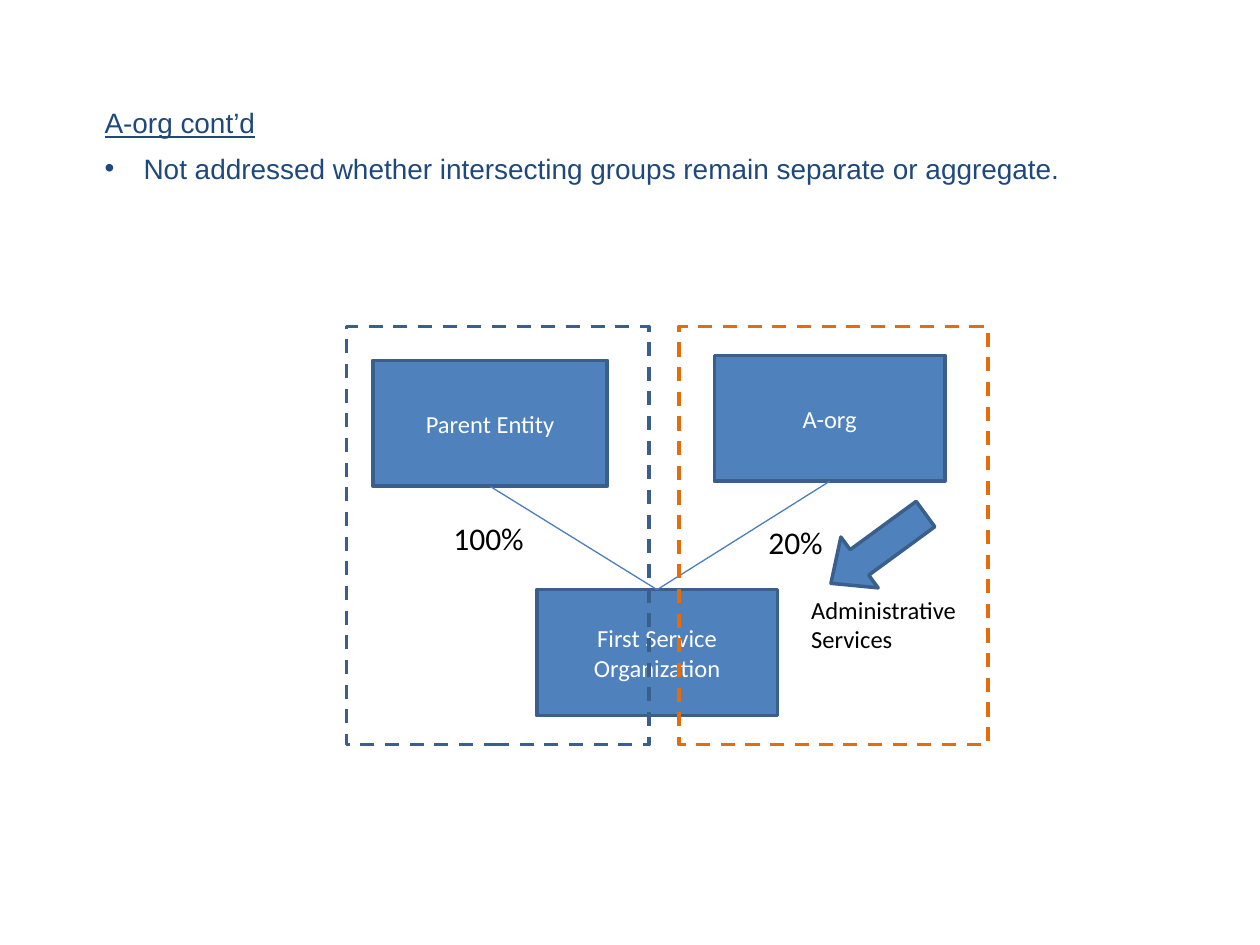
from dataclasses import dataclass

from lxml import etree
from pptx import Presentation
from pptx.dml.color import RGBColor
from pptx.enum.dml import MSO_LINE
from pptx.enum.shapes import MSO_CONNECTOR, MSO_SHAPE
from pptx.enum.text import MSO_ANCHOR, MSO_AUTO_SIZE, PP_ALIGN
from pptx.oxml.ns import qn
from pptx.util import Inches, Pt


@dataclass(frozen=True)
class Theme:
    fill: str = "4F81BD"
    edge: str = "3A5F8C"
    link: str = "4B7EBC"
    accent: str = "E46C0A"
    navy: str = "1F497D"
    white: str = "FFFFFF"
    black: str = "000000"
    head: str = "Arial"
    body: str = "Calibri"
    large: int = 18
    mid: int = 16
    small: int = 14


def rgb(code):
    return RGBColor.from_string(code)


def area(*sizes):
    return [Inches(size) for size in sizes]


class Board:
    """Holds the style and the current slide."""

    def __init__(self, deck, theme):
        self.theme = theme
        self.slide = deck.slides.add_slide(deck.slide_layouts[1])
        self.shapes = self.slide.shapes

    def wording(self, frame, text, font, size, color, **style):
        frame.text = text
        para = frame.paragraphs[0]
        for name, value in style.items():
            setattr(para, name, value)
        face = para.runs[0].font
        for name, value in {"name": font, "size": Pt(size)}.items():
            setattr(face, name, value)
        face.color.rgb = rgb(color)
        return para

    def holder(self, index, text, spot):
        """Fill a template placeholder with one line of heading text."""
        shape = self.slide.placeholders[index]
        shape.left, shape.top, shape.width, shape.height = area(*spot)
        frame = shape.text_frame
        settings = {
            "margin_left": 0, "margin_right": 0,
            "margin_top": 0, "margin_bottom": 0,
            "vertical_anchor": MSO_ANCHOR.TOP,
            "auto_size": MSO_AUTO_SIZE.NONE, "word_wrap": True,
        }
        for name, value in settings.items():
            setattr(frame, name, value)
        look = self.theme
        return self.wording(frame, text, look.head, look.mid, look.navy,
                            alignment=PP_ALIGN.LEFT, space_before=Pt(0),
                            space_after=Pt(6))

    def title(self, text, spot):
        self.holder(0, text, spot).runs[0].font.underline = True

    def bullet(self, text, spot):
        para = self.holder(1, text, spot)
        props = para._p.get_or_add_pPr()
        props.set("marL", str(Inches(0.31)))
        props.set("indent", str(-Inches(0.31)))
        etree.SubElement(props, qn("a:buFont")).set("typeface", self.theme.head)
        etree.SubElement(props, qn("a:buChar")).set("char", "•")

    def shape(self, kind, spot, edge, fill=None):
        shape = self.shapes.add_shape(kind, *area(*spot))
        shape.shadow.inherit = False
        if fill:
            shape.fill.solid()
            shape.fill.fore_color.rgb = rgb(fill)
        else:
            shape.fill.background()
        shape.line.color.rgb = rgb(edge)
        shape.line.width = Pt(2)
        return shape

    def box(self, text, spot):
        look = self.theme
        shape = self.shape(MSO_SHAPE.RECTANGLE, spot, look.edge, look.fill)
        frame = shape.text_frame
        frame.word_wrap = True
        frame.vertical_anchor = MSO_ANCHOR.MIDDLE
        self.wording(frame, text, look.body, look.small, look.white,
                     alignment=PP_ALIGN.CENTER)
        return shape

    def group(self, spot, color):
        shape = self.shape(MSO_SHAPE.RECTANGLE, spot, color)
        shape.line.dash_style = MSO_LINE.DASH

    def arrow(self, spot, turn):
        look = self.theme
        shape = self.shape(MSO_SHAPE.DOWN_ARROW, spot, look.edge, look.fill)
        shape.adjustments[0], shape.adjustments[1] = 0.5, 0.56
        shape.rotation = turn

    def link(self, child, owner):
        """Join the top of the child to the bottom of its owner."""
        line = self.shapes.add_connector(MSO_CONNECTOR.STRAIGHT, 0, 0, 0, 0)
        line.begin_connect(child, 0)
        line.end_connect(owner, 2)
        line.line.color.rgb = rgb(self.theme.link)
        line.line.width = Pt(0.75)
        etree.SubElement(line._element.spPr, qn("a:effectLst"))

    def label(self, text, spot, size):
        frame = self.shapes.add_textbox(*area(*spot)).text_frame
        frame.word_wrap = True
        frame.auto_size = MSO_AUTO_SIZE.SHAPE_TO_FIT_TEXT
        self.wording(frame, text, self.theme.body, size, self.theme.black)


def main():
    deck = Presentation()
    deck.slide_width, deck.slide_height = area(10, 7.5)
    look = Theme()
    board = Board(deck, look)

    # Heading and point
    board.title("A-org cont’d", (0.83, 0.84, 8.25, 0.3))
    board.bullet("Not addressed whether intersecting groups remain "
                 "separate or aggregate.", (0.83, 1.2, 8.25, 0.61))

    # Entities and ownership lines
    parent = board.box("Parent Entity", (2.96, 2.86, 1.86, 1))
    aorg = board.box("A-org", (5.67, 2.82, 1.83, 1))
    first = board.box("First Service Organization", (4.26, 4.68, 1.91, 1))
    for owner in (parent, aorg):
        board.link(first, owner)

    # Shares and service label
    board.label("100%", (3.5, 4.07, 0.78, 0.4), look.large)
    board.label("20%", (6, 4.1, 0.64, 0.4), look.large)
    board.label("Administrative Services", (6.34, 4.67, 1.5, 0.57), look.small)

    # Intersecting groups
    board.group((2.75, 2.59, 2.4, 3.32), look.edge)
    board.group((5.39, 2.59, 2.45, 3.32), look.accent)

    # Flow of services
    board.arrow((6.72, 3.89, 0.5, 0.93), 53.8)

    deck.save("out.pptx")


if __name__ == "__main__":
    main()
